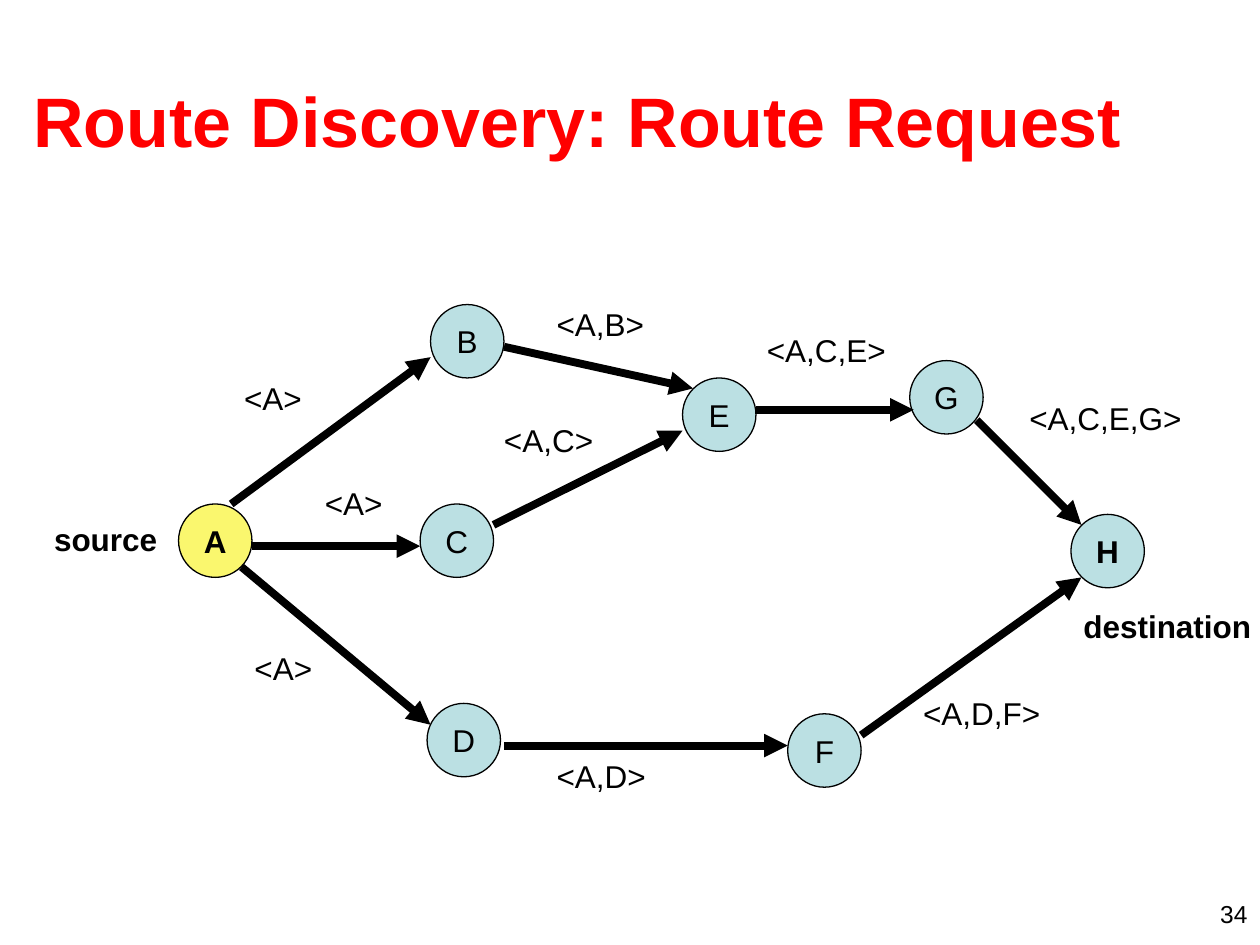
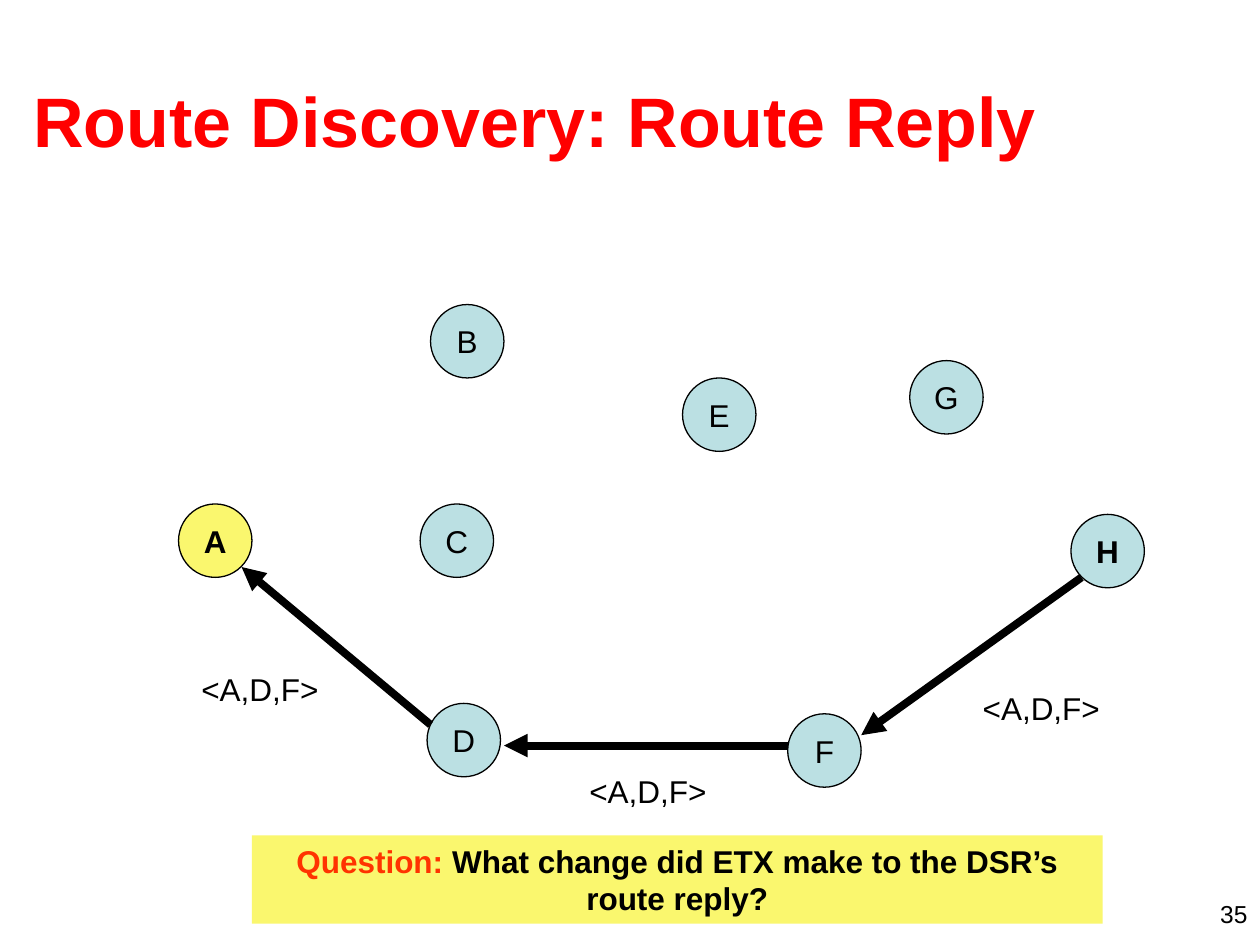
"""Build two slides on route discovery: the request flood and the reply path."""
import dataclasses

import pptx
import pptx.dml.color
import pptx.enum.shapes
import pptx.enum.text
import pptx.oxml
import pptx.oxml.ns
import pptx.util

Cm = pptx.util.Cm
Pt = pptx.util.Pt
Align = pptx.enum.text.PP_ALIGN
Anchor = pptx.enum.text.MSO_ANCHOR
Shapes = pptx.enum.shapes.MSO_SHAPE


@dataclasses.dataclass(frozen=True)
class Theme:
    font: str = "Arial"
    title_size: int = 40
    body_size: int = 18
    number_size: int = 14
    title: str = "FF0000"
    ink: str = "000000"
    accent: str = "FF3300"
    node: str = "BBE0E3"
    highlight: str = "FAF76E"
    outline: float = 0.75
    arrow: float = 4.5


THEME = Theme()
FIRST_NUMBER = 34
NODE_SIZE = 1.48
LABEL_HEIGHT = 1.02
SOURCE, DESTINATION = "A", "H"

NODES = {
    "A": (3.6, 10.16), "B": (8.68, 6.14), "C": (8.47, 10.16), "D": (8.61, 14.18),
    "E": (13.76, 7.62), "F": (15.88, 14.39), "G": (18.34, 7.27), "H": (21.59, 10.37),
}
LINKS = {
    "AB": ((4.66, 10.16), (8.68, 7.2)),
    "AC": ((5.08, 11.01), (8.47, 11.01)),
    "AD": ((4.87, 11.43), (8.68, 14.61)),
    "BE": ((10.16, 6.99), (13.97, 7.83)),
    "CE": ((9.95, 10.58), (13.76, 8.68)),
    "DF": ((10.16, 15.03), (15.88, 15.03)),
    "EG": ((15.24, 8.26), (18.42, 8.26)),
    "FH": ((17.36, 14.82), (21.8, 11.64)),
    "GH": ((19.69, 8.47), (21.8, 10.58)),
}
SLIDES = [
    {
        "title": "Route Discovery: Route Request",
        "reverse": False,
        "hops": [
            ("AB", "<A>", (4.67, 7.52)), ("AC", "<A>", (6.3, 9.63)),
            ("AD", "<A>", (4.88, 12.95)), ("BE", "<A,B>", (10.97, 6.02)),
            ("CE", "<A,C>", (9.91, 8.36)), ("DF", "<A,D>", (10.97, 15.14)),
            ("EG", "<A,C,E>", (15.21, 6.55)), ("FH", "<A,D,F>", (18.36, 13.87)),
            ("GH", "<A,C,E,G>", (20.5, 7.92)),
        ],
        "roles": [("source", (0.84, 10.36), 2.59), ("destination", (21.59, 12.12), 3.89)],
        "question": None,
    },
    {
        "title": "Route Discovery: Route Reply",
        "reverse": True,
        "hops": [
            ("AD", "<A,D,F>", (3.81, 13.39)), ("DF", "<A,D,F>", (11.63, 15.44)),
            ("FH", "<A,D,F>", (19.56, 13.77)),
        ],
        "roles": [],
        "question": [("Question:", THEME.accent),
                     (" What change did ETX make to the DSR’s route reply?", THEME.ink)],
    },
]


def rgb(value):
    return pptx.dml.color.RGBColor.from_string(value)


def write(shape, text, *, size=THEME.body_size, color=THEME.ink, bold=False,
          align=Align.LEFT, anchor=Anchor.TOP, wrap=True):
    """Fill a shape with one paragraph, given as a string or (text, colour) runs."""
    frame = shape.text_frame
    frame.auto_size = pptx.enum.text.MSO_AUTO_SIZE.NONE
    frame.word_wrap = wrap
    frame.vertical_anchor = anchor
    paragraph = frame.paragraphs[0]
    paragraph.alignment = align
    for words, run_color in [(text, color)] if isinstance(text, str) else text:
        run = paragraph.add_run()
        run.text = words
        run.font.name = THEME.font
        run.font.size = Pt(size)
        run.font.bold = bold
        run.font.color.rgb = rgb(run_color)


def place(shape, left, top, width, height):
    shape.left, shape.top, shape.width, shape.height = map(Cm, (left, top, width, height))


def add_label(slide, text, position, width, height=LABEL_HEIGHT, **text_format):
    box = slide.shapes.add_textbox(*map(Cm, (*position, width, height)))
    write(box, text, **text_format)


def add_filled(slide, kind, box, color):
    shape = slide.shapes.add_shape(kind, *map(Cm, box))
    shape.shadow.inherit = False
    shape.fill.solid()
    shape.fill.fore_color.rgb = rgb(color)
    return shape


def add_node(slide, name, position):
    color = THEME.highlight if name == SOURCE else THEME.node
    node = add_filled(slide, Shapes.OVAL, (*position, NODE_SIZE, NODE_SIZE), color)
    node.line.color.rgb = rgb(THEME.ink)
    node.line.width = Pt(THEME.outline)
    write(node, name, bold=name in (SOURCE, DESTINATION), align=Align.CENTER,
          anchor=Anchor.MIDDLE, wrap=False)


def add_arrow(slide, start, end):
    arrow = slide.shapes.add_connector(
        pptx.enum.shapes.MSO_CONNECTOR.STRAIGHT, *map(Cm, (*start, *end)))
    arrow.line.color.rgb = rgb(THEME.ink)
    arrow.line.width = Pt(THEME.arrow)
    properties = arrow._element.spPr
    head = pptx.oxml.parse_xml(
        f'<a:tailEnd {pptx.oxml.ns.nsdecls("a")} type="triangle"/>')
    properties.get_or_add_ln().append(head)
    properties.append(pptx.oxml.parse_xml(f'<a:effectLst {pptx.oxml.ns.nsdecls("a")}/>'))


def add_hop(slide, link, route, position, reverse):
    start, end = LINKS[link]
    add_arrow(slide, *((end, start) if reverse else (start, end)))
    add_label(slide, route, position, 1.68 + 0.63 * route.count(","), wrap=False)


def build_slide(presentation, content, number):
    slide = presentation.slides.add_slide(presentation.slide_layouts.get_by_name("Title Only"))
    title = slide.shapes.title
    place(title, 0.42, 0.81, 24.34, 3.18)
    write(title, content["title"], size=THEME.title_size, color=THEME.title, bold=True,
          anchor=Anchor.MIDDLE)
    add_label(slide, str(number), (19.47, 17.99), 5.93, 0.64, size=THEME.number_size,
              align=Align.RIGHT)
    for name, position in NODES.items():
        add_node(slide, name, position)
    for link, route, position in content["hops"]:
        add_hop(slide, link, route, position, content["reverse"])
    for role, position, width in content["roles"]:
        add_label(slide, role, position, width, bold=True, wrap=False)
    if content["question"]:
        banner = add_filled(slide, Shapes.RECTANGLE, (5.08, 16.84, 17.15, 1.78),
                            THEME.highlight)
        banner.line.fill.background()
        write(banner, content["question"], bold=True, align=Align.CENTER)


def main():
    presentation = pptx.Presentation()
    presentation.slide_width, presentation.slide_height = Cm(25.4), Cm(19.05)
    for number, content in enumerate(SLIDES, FIRST_NUMBER):
        build_slide(presentation, content, number)
    presentation.save("out.pptx")


if __name__ == "__main__":
    main()
